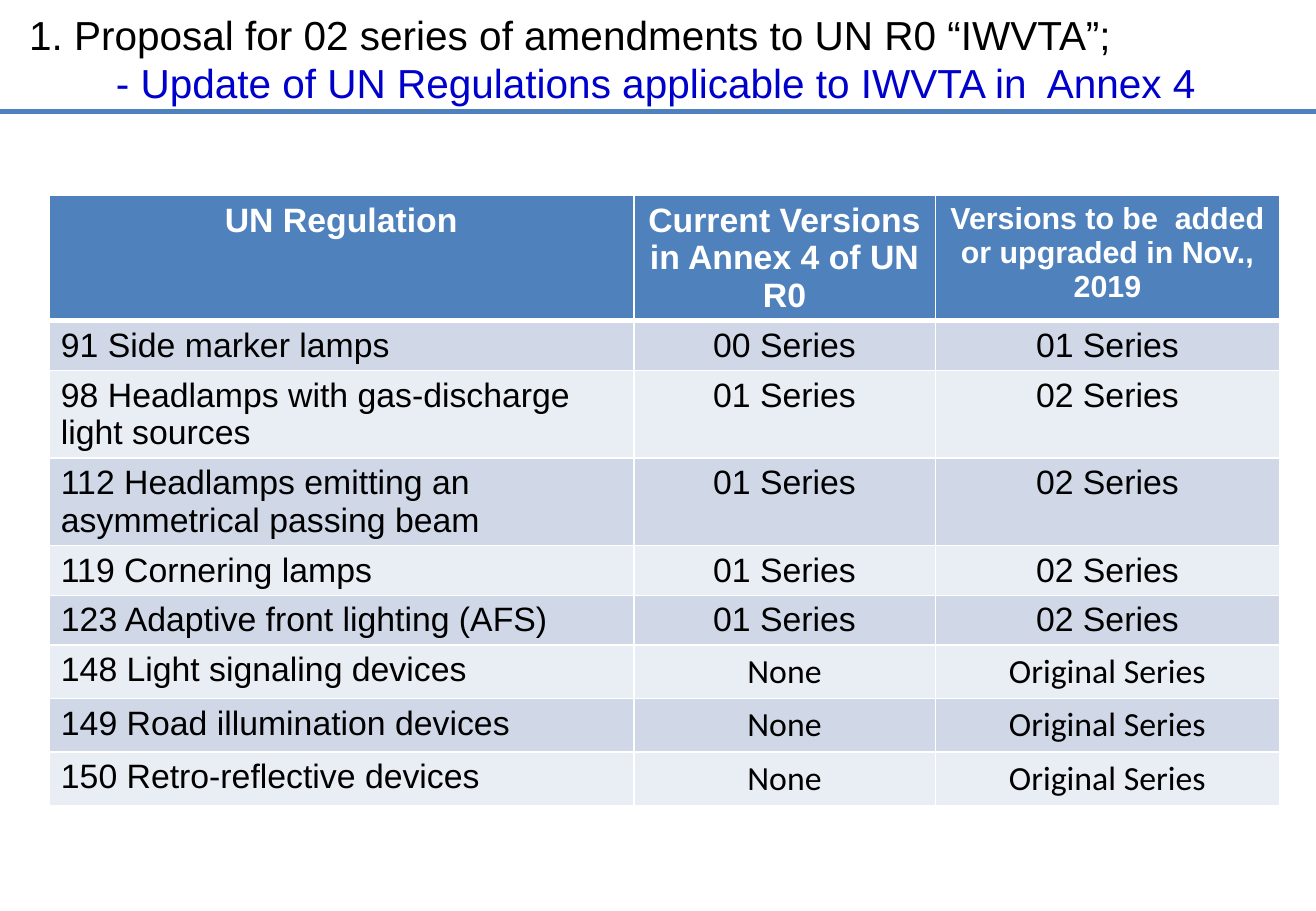
import pptx
import pptx.dml.color
import pptx.enum.shapes
import pptx.enum.text
import pptx.oxml
import pptx.oxml.ns
import pptx.util
from lxml import etree

Cm = pptx.util.Cm
Pt = pptx.util.Pt
RGBColor = pptx.dml.color.RGBColor
ALIGN = pptx.enum.text.PP_ALIGN
qn = pptx.oxml.ns.qn

BLUE = RGBColor(0x4F, 0x81, 0xBD)
TITLE_BLUE = RGBColor(0x00, 0x00, 0xCC)
BAND_DARK = RGBColor(0xD0, 0xD8, 0xE8)
BAND_LIGHT = RGBColor(0xE9, 0xED, 0xF4)
BLACK = RGBColor(0, 0, 0)
WHITE = RGBColor(0xFF, 0xFF, 0xFF)

SLIDE_WIDTH, SLIDE_HEIGHT = Cm(27.51), Cm(19.05)
COLUMN_WIDTHS = (12.22, 6.3, 7.19)
ROW_HEIGHT = Cm(1.04)

HEADINGS = (
    "UN Regulation",
    "Current Versions in Annex 4 of UN R0",
    "Versions to be  added or upgraded in Nov., 2019",
)
REGULATIONS = (
    ("91 Side marker lamps", "00 Series", "01 Series"),
    ("98 Headlamps with gas-discharge light sources", "01 Series", "02 Series"),
    ("112 Headlamps emitting an asymmetrical passing beam", "01 Series", "02 Series"),
    ("119 Cornering lamps", "01 Series", "02 Series"),
    ("123 Adaptive front lighting (AFS)", "01 Series", "02 Series"),
    ("148 Light signaling devices", "None", "Original Series"),
    ("149 Road illumination devices", "None", "Original Series"),
    ("150 Retro-reflective devices", "None", "Original Series"),
)


def add_run(paragraph, text, size, color, font="Arial", bold=False):
    run = paragraph.add_run()
    run.text = text
    run.font.size = Pt(size)
    run.font.name = font
    run.font.bold = bold
    run.font.color.rgb = color


def set_borders(cell, bottom_width):
    properties = cell._tc.get_or_add_tcPr()
    for side, width in (("L", 1), ("R", 1), ("T", 1), ("B", bottom_width)):
        border = etree.SubElement(properties, qn(f"a:ln{side}"), w=str(Pt(width)))
        fill = etree.SubElement(border, qn("a:solidFill"))
        etree.SubElement(fill, qn("a:srgbClr"), val=str(WHITE))


def fill_cell(cell, text, fill, align, bottom_width=1, **style):
    set_borders(cell, bottom_width)
    cell.fill.solid()
    cell.fill.fore_color.rgb = fill
    paragraph = cell.text_frame.paragraphs[0]
    paragraph.alignment = align
    add_run(paragraph, text, **style)


def add_rule(slide, left, top, width):
    rule = slide.shapes.add_connector(
        pptx.enum.shapes.MSO_CONNECTOR.STRAIGHT, left, top, left + width, top)
    rule.line.color.rgb = BLUE
    rule.line.width = Pt(3)
    etree.SubElement(rule._element.spPr, qn("a:effectLst"))


def add_title(slide, left, top, width, height):
    title = slide.shapes.add_textbox(left, top, width, height).text_frame
    title.word_wrap = True
    add_run(title.paragraphs[0],
            "1. Proposal for 02 series of amendments to UN R0 “IWVTA”;", 24, BLACK)
    subtitle = title.add_paragraph()
    subtitle.alignment = ALIGN.CENTER
    add_run(subtitle,
            "- Update of UN Regulations applicable to IWVTA in  Annex 4", 24, TITLE_BLUE)


def add_regulations(slide, left, top, width, height):
    table = slide.shapes.add_table(
        len(REGULATIONS) + 1, len(HEADINGS), left, top, width, height).table
    for column, share in zip(table.columns, COLUMN_WIDTHS):
        column.width = int(width * share / sum(COLUMN_WIDTHS))
    # Rows grow with their text
    for row in table.rows:
        row.height = ROW_HEIGHT

    # Heading row
    for c, (heading, size) in enumerate(zip(HEADINGS, (20, 20, 18))):
        fill_cell(table.cell(0, c), heading, BLUE, ALIGN.CENTER, bottom_width=3,
                  size=size, color=WHITE, bold=True)

    # Banded regulation rows
    for r, regulation in enumerate(REGULATIONS, start=1):
        band = BAND_DARK if r % 2 else BAND_LIGHT
        version_font = "Calibri" if regulation[1] == "None" else "Arial"
        for c, text in enumerate(regulation):
            fill_cell(table.cell(r, c), text, band,
                      ALIGN.CENTER if c else ALIGN.LEFT,
                      size=20, color=BLACK, font=version_font if c else "Arial")


def main():
    presentation = pptx.Presentation()
    presentation.slide_width = SLIDE_WIDTH
    presentation.slide_height = SLIDE_HEIGHT
    slide = presentation.slides.add_slide(presentation.slide_layouts[6])
    add_rule(slide, 0, Cm(2.34), SLIDE_WIDTH)
    add_regulations(slide, Cm(1.02), Cm(4.09), Cm(25.73), Cm(12.45))
    add_title(slide, Cm(0.36), Cm(0.08), Cm(26.7), Cm(2.31))
    presentation.save("out.pptx")


if __name__ == "__main__":
    main()
